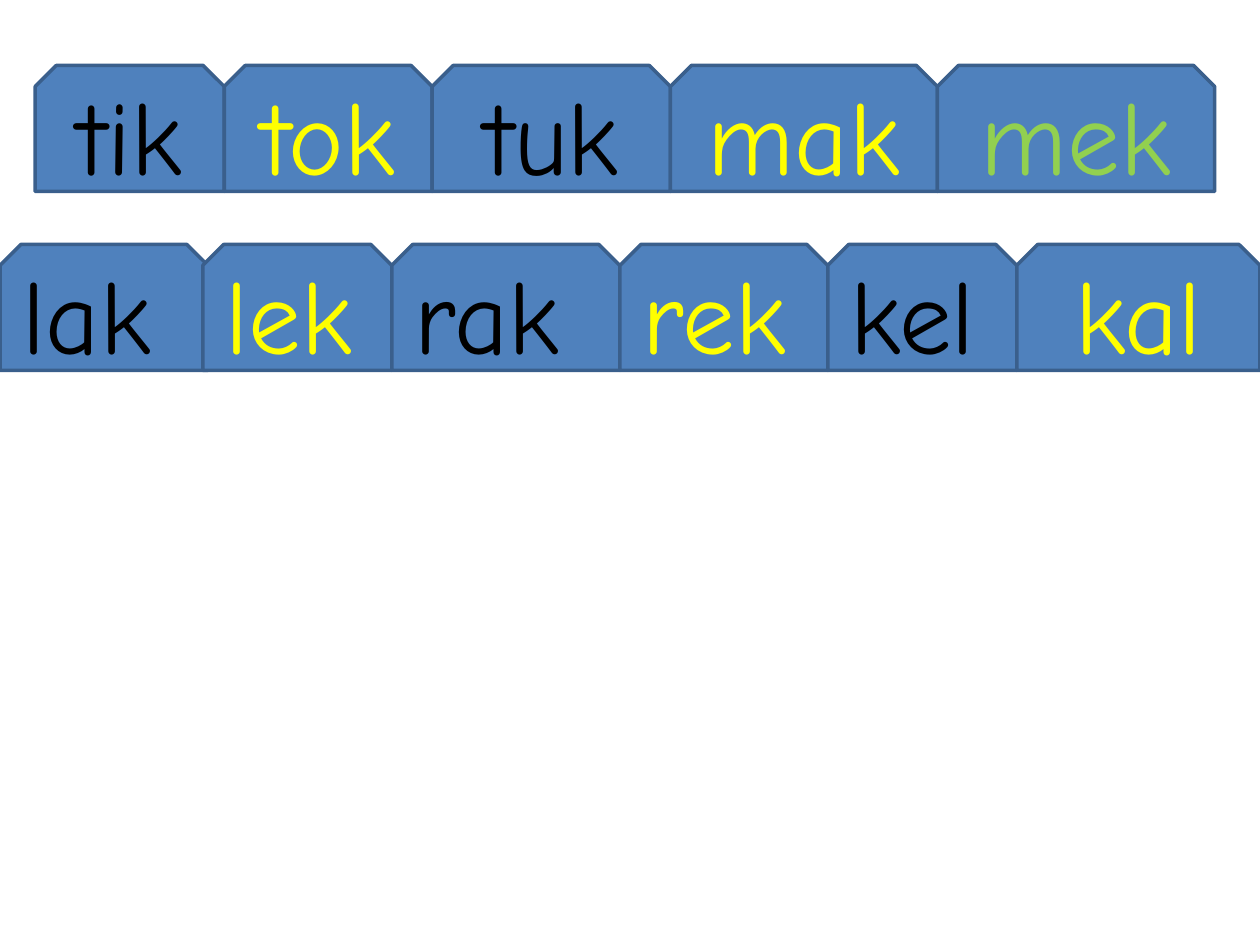
from pptx import Presentation
from pptx.dml.color import RGBColor
from pptx.enum.shapes import MSO_SHAPE
from pptx.enum.text import MSO_ANCHOR, PP_ALIGN
from pptx.util import Inches, Pt

FONT = "Comic Neue"
HUES = {
    "fill": "4F81BD",
    "edge": "3A5F8C",
    "black": "000000",
    "yellow": "FFFF00",
    "green": "92D050",
}
TALL = 1
TOPS = (0.52, 1.94)
MID, LEFT = PP_ALIGN.CENTER, PP_ALIGN.LEFT


def hue(name):
    """Return the named colour."""
    return RGBColor.from_string(HUES[name])


def add_tab(slide, left, top, width, word, tint, align):
    """Draw one snipped tab with its word."""
    tab = slide.shapes.add_shape(
        MSO_SHAPE.SNIP_2_SAME_RECTANGLE,
        Inches(left), Inches(top), Inches(width), Inches(TALL))
    tab.shadow.inherit = False
    tab.fill.solid()
    tab.fill.fore_color.rgb = hue("fill")
    tab.line.color.rgb = hue("edge")
    tab.line.width = Pt(2)
    frame = tab.text_frame
    frame.vertical_anchor = MSO_ANCHOR.MIDDLE
    para = frame.paragraphs[0]
    para.alignment = align
    run = para.add_run()
    run.text = word
    run.font.name = FONT
    run.font.size = Pt(60)
    run.font.color.rgb = hue(tint)


def add_row(slide, left, top, tabs):
    """Set tabs side by side, each starting where the last one ends."""
    for word, tint, width, align in tabs:
        add_tab(slide, left, top, width, word, tint, align)
        left += width


def main():
    """Build the slide with its two rows of words."""
    deck = Presentation()
    deck.slide_width, deck.slide_height = Inches(10), Inches(7.5)
    slide = deck.slides.add_slide(deck.slide_layouts[6])
    add_row(slide, 0.28, TOPS[0], [
        ("tik", "black", 1.5, MID),
        ("tok", "yellow", 1.65, MID),
        ("tuk", "black", 1.89, MID),
        ("mak", "yellow", 2.12, MID),
        ("mek", "green", 2.2, MID),
    ])
    add_row(slide, 0, TOPS[1], [("lak", "black", 1.65, LEFT)])
    add_row(slide, 1.61, TOPS[1], [
        ("lek", "yellow", 1.5, LEFT),
        ("rak", "black", 1.81, LEFT),
        ("rek", "yellow", 1.65, LEFT),
        ("kel", "black", 1.5, LEFT),
        ("kal", "yellow", 1.93, MID),
    ])
    deck.save("out.pptx")


if __name__ == "__main__":
    main()
